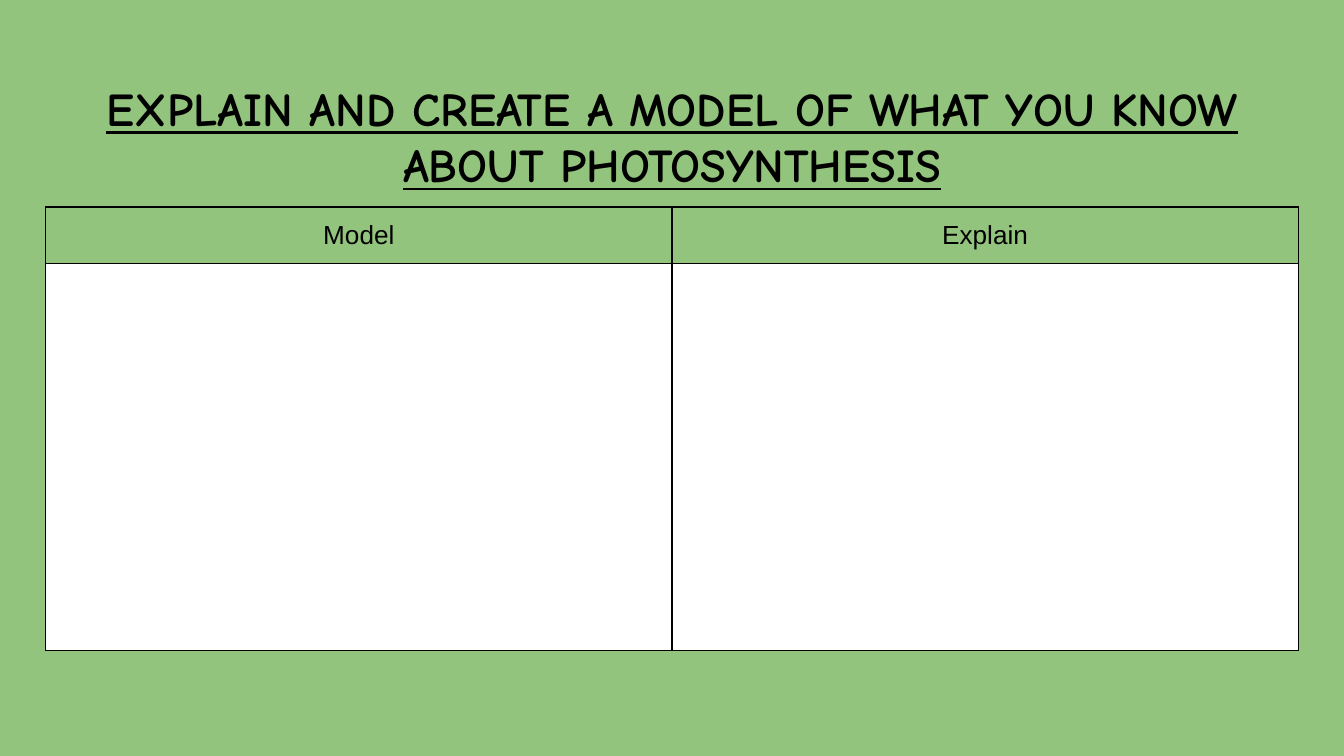
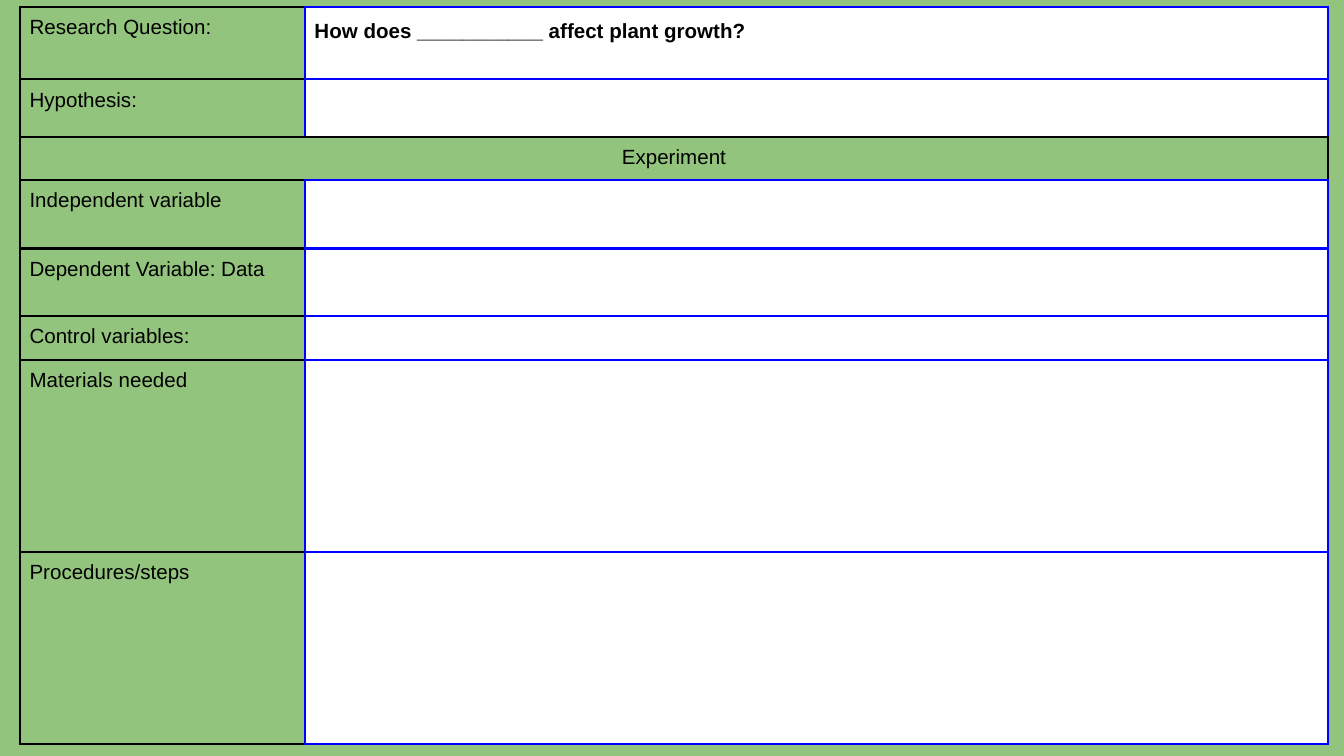
from lxml import etree
from pptx import Presentation
from pptx import util as u
from pptx.dml.color import RGBColor
from pptx.enum import text
from pptx.oxml import ns

HUES = {"green": "93C47D", "white": "FFFFFF", "black": "000000", "blue": "0000FF"}
FONT = "Arial"
TITLE = "Comic Neue"


def rgb(hue):
    return RGBColor.from_string(HUES[hue])


class Deck:
    def __init__(self):
        self.prs = Presentation()
        # Widescreen, 16 to 9
        self.prs.slide_width = u.Inches(10)
        self.prs.slide_height = u.Inches(10 * 9 / 16)
        self.page = None

    def slide(self, layout):
        self.page = self.prs.slides.add_slide(self.prs.slide_layouts[layout])
        fill = self.page.background.fill
        fill.solid()
        fill.fore_color.rgb = rgb("green")

    def run(self, par, words, size, font=FONT, bold=False, under=False):
        run = par.add_run()
        run.text = words
        run.font.size = u.Pt(size)
        run.font.name = font
        run.font.bold = bold
        run.font.underline = under
        run.font.color.rgb = rgb("black")

    def title(self, words, box):
        head = self.page.shapes.title
        head.left, head.top, head.width, head.height = map(u.Inches, box)
        frame = head.text_frame
        frame.word_wrap = True
        frame.auto_size = text.MSO_AUTO_SIZE.NONE
        frame.vertical_anchor = text.MSO_ANCHOR.TOP
        frame.margin_left = frame.margin_right = u.Inches(0.1)
        frame.margin_top = frame.margin_bottom = u.Inches(0.1)
        par = frame.paragraphs[0]
        par.alignment = text.PP_ALIGN.CENTER
        self.run(par, words, 25.2, TITLE, bold=True, under=True)

    def table(self, left, top, cols, rows):
        box = map(u.Inches, (left, top, sum(cols), sum(rows)))
        grid = self.page.shapes.add_table(len(rows), len(cols), *box).table
        grid.first_row = grid.horz_banding = False
        for col, width in zip(grid.columns, cols):
            col.width = u.Inches(width)
        for row, height in zip(grid.rows, rows):
            row.height = u.Inches(height)
        return grid

    def cell(self, cell, words, size, pad, fill=None, edges="black", width=1.5,
             center=False, bold=False, space=None):
        cell.margin_left = cell.margin_right = u.Inches(pad)
        cell.margin_top = cell.margin_bottom = u.Inches(pad)
        self.edge(cell, edges, width)
        if fill:
            cell.fill.solid()
            cell.fill.fore_color.rgb = rgb(fill)
        else:
            cell.fill.background()
        par = cell.text_frame.paragraphs[0]
        par.alignment = text.PP_ALIGN.CENTER if center else text.PP_ALIGN.LEFT
        if space:
            par.line_spacing = space
        if words:
            self.run(par, words, size, bold=bold)
        else:
            # An empty cell keeps its small type, so the row stays low
            etree.SubElement(par._p, ns.qn("a:endParaRPr"), sz=str(size * 100))

    def edge(self, cell, edges, width):
        """Edges is one colour, or four in the order left, right, top, bottom."""
        hues = [edges] * 4 if isinstance(edges, str) else edges
        props = cell._tc.get_or_add_tcPr()
        for side, hue in zip("LRTB", hues):
            line = etree.SubElement(props, ns.qn(f"a:ln{side}"), w=str(u.Pt(width)))
            solid = etree.SubElement(line, ns.qn("a:solidFill"))
            etree.SubElement(solid, ns.qn("a:srgbClr"), val=HUES[hue])


def model(deck):
    deck.slide(5)
    deck.title("EXPLAIN AND CREATE A MODEL OF WHAT YOU KNOW ABOUT PHOTOSYNTHESIS",
               (0.34, 0.49, 9.32, 0.63))
    grid = deck.table(0.34, 1.54, [4.66] * 2, [0.42, 2.88])
    for col, head in enumerate(("Model", "Explain")):
        deck.cell(grid.cell(0, col), head, 14, 0.1, width=0.75, center=True)
        deck.cell(grid.cell(1, col), "", 14, 0.1, "white", width=0.75)


def plan(deck):
    deck.slide(6)
    # Label, row height and answer; no answer means a full-width heading
    rows = [
        ("Research Question:", 0.54, "How does ___________ affect plant growth?"),
        ("Hypothesis:", 0.43, ""),
        ("Experiment", 0.32, None),
        ("Independent variable", 0.51, ""),
        ("Dependent Variable: Data", 0.5, ""),
        ("Control variables:", 0.32, ""),
        ("Materials needed", 1.43, ""),
        ("Procedures/steps", 1.43, ""),
    ]
    grid = deck.table(0.15, 0.05, [2.12, 7.61], [row[1] for row in rows])
    for i, (label, _, reply) in enumerate(rows):
        left, right = grid.cell(i, 0), grid.cell(i, 1)
        if reply is None:
            deck.cell(left, label, 11, 0.07, "green", center=True)
            deck.cell(right, "", 11, 0.07, "green")
            left.merge(right)
            continue
        deck.cell(left, label, 11, 0.07, "green", ("black", "blue", "black", "black"))
        over = i + 1 < len(rows) and rows[i + 1][2] is None
        base = "black" if over else "blue"
        deck.cell(right, reply, 11, 0.07, "white", ("blue", "blue", "blue", base),
                  bold=True, space=1.15 if reply else None)


def main():
    deck = Deck()
    model(deck)
    plan(deck)
    deck.prs.save("out.pptx")


if __name__ == "__main__":
    main()
